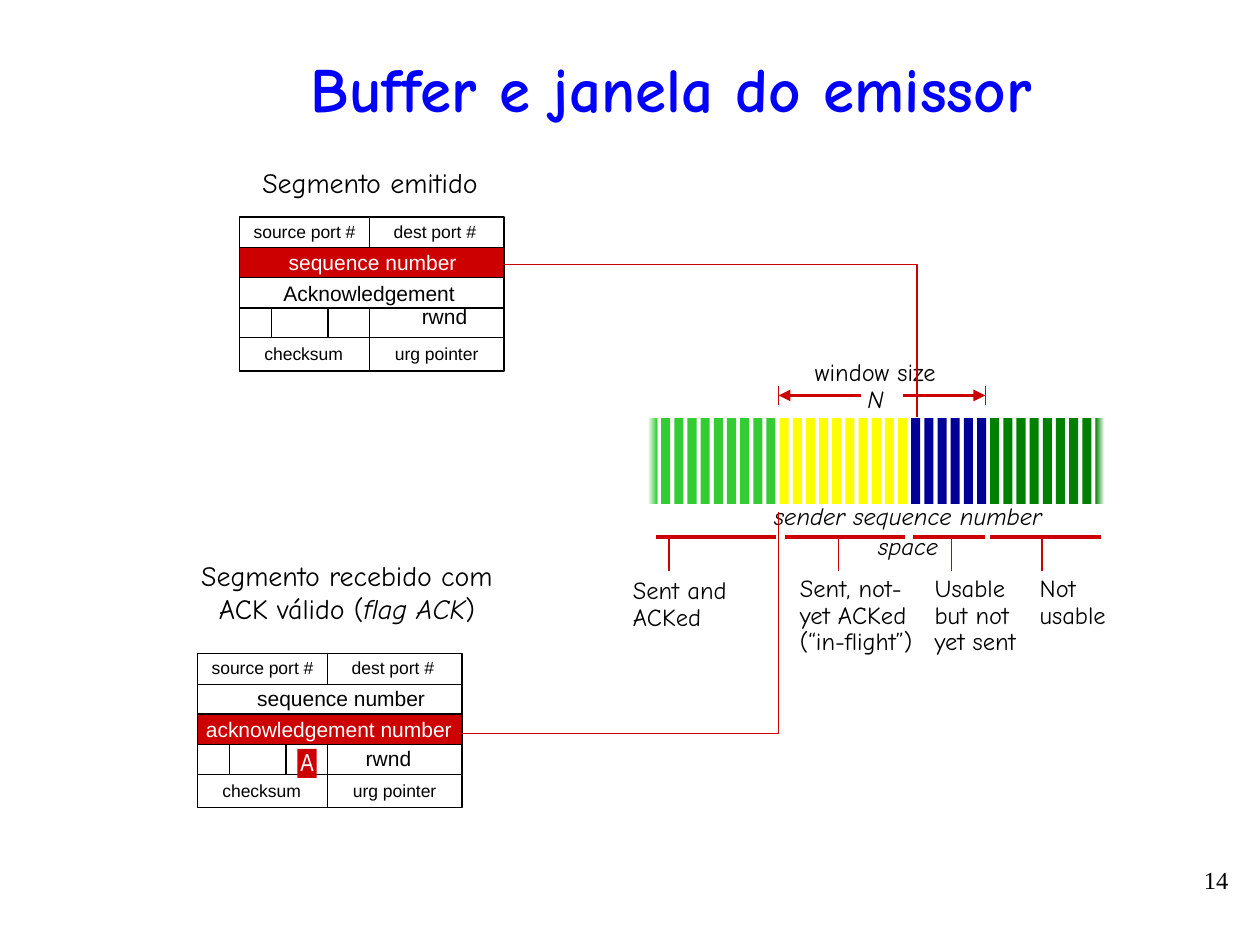
import pptx
import pptx.util
import pptx.dml.color
import pptx.enum.shapes
import pptx.enum.text
import pptx.oxml.ns
from lxml import etree

Pt = pptx.util.Pt
RGB = pptx.dml.color.RGBColor
Kind = pptx.enum.shapes.MSO_SHAPE
Align = pptx.enum.text.PP_ALIGN
Anchor = pptx.enum.text.MSO_ANCHOR
qn = pptx.oxml.ns.qn

BLACK = RGB(0, 0, 0)
WHITE = RGB(255, 255, 255)
BLUE = RGB(0, 0, 255)
RED = RGB(0xCC, 0, 0)
LIME = RGB(0x33, 0xCC, 0x33)
YELLOW = RGB(255, 255, 0)
NAVY = RGB(0, 0, 0x99)
GREEN = RGB(0, 0x80, 0)
COMIC = "Comic Neue"

# Segment header: row edges, inner walls (x, top row, bottom row), in points
WIDE = 151
ROWS = [0, 17.5, 34.5, 52, 69, 88]
WALLS = [(74, 0, 1), (74, 3, 5), (18, 3, 4), (50.5, 3, 4)]
# Fields common to both: text, centre, top, size
FIELDS = [
    ("source port #", 37, -1.5, 10),
    ("dest port #", 111.5, -1.5, 10),
    ("checksum", 36.5, 68.5, 10),
    ("urg pointer", 112.5, 68.5, 10),
]
# Left, top, highlighted row, own fields
SEGMENTS = [
    (137, 124, 1, [("sequence number", 76, 15, 12),
                   ("Acknowledgement", 74, 32.5, 12),
                   ("rwnd", 117, 46, 12)]),
    (113, 373.5, 2, [("sequence number", 82, 15, 12),
                     ("acknowledgement number", 75, 32.5, 12),
                     ("rwnd", 109, 49, 12)]),
]

BAR_X, BAR_Y, BAR_W, BAR_H, STEP = 370.3, 239, 5.2, 49, 7.52
BARS = [(LIME, 10), (YELLOW, 10), (NAVY, 6), (GREEN, 9)]

# Underline start and end, tick, label left and top, width, lines
SPANS = [
    (375, 443.5, 382.3, 354.5, 327, 74, ["Sent and", "ACKed"]),
    (448.5, 517, 479, 450, 326, 84, ["Sent, not-yet ACKed", "(“in-flight”)"]),
    (521.5, 563, 543.6, 527, 326, 84, ["Usable", "but not", "yet sent"]),
    (566, 629, 595.4, 587, 326, 65, ["Not", "usable"]),
]
SPAN_Y, TICK_END = 306.7, 326.3
# Window arrow: from, to
ARROWS = [(516, 563), (492, 445)]
ARROW_Y = 226
PATHS = [
    [(287, 151), (524, 151), (524, 238.3)],
    [(263.5, 419), (445, 419), (445, 292.5)],
]

deck = pptx.Presentation()
deck.slide_width, deck.slide_height = Pt(720), Pt(540)
slide = deck.slides.add_slide(deck.slide_layouts[6])
shapes = slide.shapes


def text(lines, x, y, w, h, size, font=COMIC, color=BLACK, align=Align.CENTER,
         wrap=True, space=None):
    """Each line is a string or a list of (string, italic) runs."""
    box = shapes.add_textbox(Pt(x), Pt(y), Pt(w), Pt(h))
    frame = box.text_frame
    frame.word_wrap = wrap
    for i, line in enumerate(lines):
        para = frame.add_paragraph() if i else frame.paragraphs[0]
        para.alignment = align
        para.line_spacing = space
        para.font.size, para.font.name = Pt(size), font
        para.font.color.rgb = color
        for words, slant in [(line, None)] if isinstance(line, str) else line:
            run = para.add_run()
            run.text = words
            run.font.italic = slant
    return box


def rect(x, y, w, h, fill=None, line=None):
    box = shapes.add_shape(Kind.RECTANGLE, Pt(x), Pt(y), Pt(w), Pt(h))
    box.shadow.inherit = False
    if fill is None:
        box.fill.background()
    else:
        box.fill.solid()
        box.fill.fore_color.rgb = fill
    if line is None:
        box.line.fill.background()
    else:
        box.line.color.rgb, box.line.width = line, Pt(0.75)
    return box


def rule(x1, y1, x2, y2, color=RED, width=0.75, arrow=False):
    line = shapes.add_connector(pptx.enum.shapes.MSO_CONNECTOR.STRAIGHT,
                                Pt(x1), Pt(y1), Pt(x2), Pt(y2))
    line.line.color.rgb, line.line.width = color, Pt(width)
    if arrow:
        etree.SubElement(line.line._get_or_add_ln(), qn("a:tailEnd"), type="triangle")
    etree.SubElement(line._element.spPr, qn("a:effectLst"))


def fade(bar, *colors):
    bar.fill.gradient()
    bar.fill.gradient_angle = 0
    for stop, color, place in zip(bar.fill.gradient_stops, colors, (0, 1)):
        stop.color.rgb, stop.position = color, place


def segment(x, y, hot, own):
    rect(x, y + ROWS[hot], WIDE, ROWS[hot + 1] - ROWS[hot], RED)
    rect(x, y, WIDE, ROWS[-1], line=BLACK)
    for edge in ROWS[1:-1]:
        rule(x, y + edge, x + WIDE, y + edge, BLACK)
    for wall, top, end in WALLS:
        rule(x + wall, y + ROWS[top], x + wall, y + ROWS[end], BLACK)
    for i, (words, mid, top, size) in enumerate(own + FIELDS):
        color = WHITE if i == hot - 1 else BLACK
        text([words], x + mid - 78, y + top, 156, size + 9.5, size, "Arial", color)


title = text(["Buffer e janela do emissor"], 60, 15, 647, 70, 36, color=BLUE)
title.text_frame.vertical_anchor = Anchor.MIDDLE
title.text_frame.paragraphs[0].font.bold = True

for part in SEGMENTS:
    segment(*part)
text(["Segmento emitido"], 131, 91, 161, 27, 16)
text([[("Segmento recebido com ACK válido (", None), ("flag ACK", True), (")", None)]],
     93.5, 315.5, 209.5, 46, 16)
rect(170, 428, 11, 16.5, RED)
text(["A"], 161.5, 423.5, 28, 24, 14, "Arial Narrow", WHITE)

colors = [color for color, count in BARS for _ in range(count)]
bars = [rect(BAR_X + i * STEP, BAR_Y, BAR_W, BAR_H, color)
        for i, color in enumerate(colors)]
fade(bars[0], WHITE, LIME)
fade(bars[-1], GREEN, WHITE)

for start, end, tick, x, y, w, lines in SPANS:
    rule(start, SPAN_Y, end, SPAN_Y, width=2.25)
    rule(tick, SPAN_Y + 1.5, tick, TICK_END)
    text(lines, x, y, w, 16 * len(lines) + 6, 14, align=Align.LEFT, space=0.9)

text(["window size", [("N", True)]], 453.5, 202.5, 93.5, 38, 14, wrap=False, space=0.9)
for start, end in ARROWS:
    rule(start, ARROW_Y, end, ARROW_Y, width=2.25, arrow=True)
    rule(end, ARROW_Y - 5.5, end, ARROW_Y + 5.5)
text([[("sender sequence number space", True)]], 430, 283, 178, 42, 14)

for first, *rest in PATHS:
    pen = shapes.build_freeform(Pt(first[0]), Pt(first[1]))
    pen.add_line_segments([(Pt(x), Pt(y)) for x, y in rest], close=False)
    link = pen.convert_to_shape()
    link.shadow.inherit = False
    link.fill.background()
    link.line.color.rgb, link.line.width = RED, Pt(0.75)

text(["14"], 541.5, 491, 167.5, 37.5, 14, "Times New Roman", align=Align.RIGHT)

deck.save("out.pptx")
